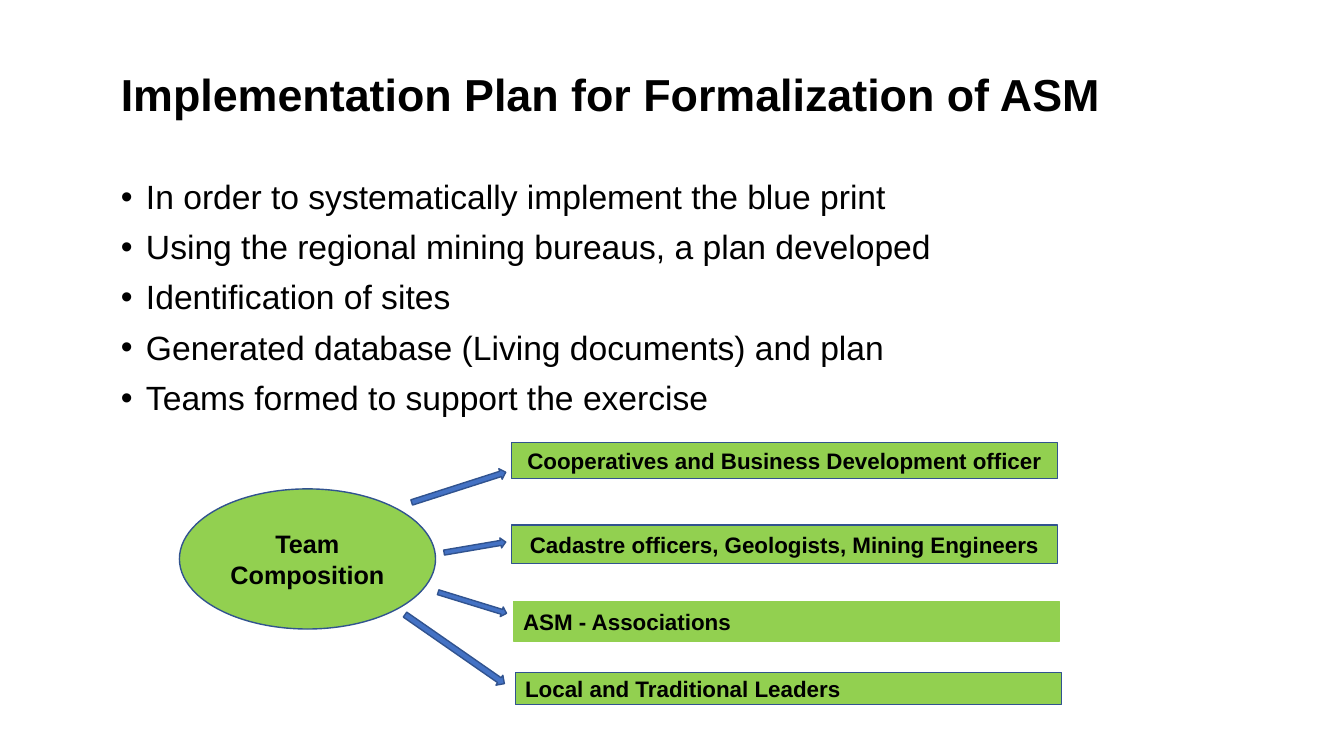
from lxml.etree import SubElement
from pptx import Presentation
from pptx.dml.color import RGBColor
from pptx.enum.shapes import MSO_SHAPE as Shape
from pptx.enum.text import MSO_ANCHOR as Anchor, PP_ALIGN as Align
from pptx.oxml.ns import qn
from pptx.util import Emu, Pt

EMU_PER_PX = 9144  # 100 px to the inch
COLORS = {"text": "000000", "box": "92D050", "outline": "31538F", "arrow": "4472C4"}
FONT = "Arial"

TITLE = "Implementation Plan for Formalization of ASM"
BULLETS = [
    "In order to systematically implement the blue print",
    "Using the regional mining bureaus, a plan developed",
    "Identification of sites",
    "Generated database (Living documents) and plan",
    "Teams formed to support the exercise",
]
MEMBER_WIDTH = 542
# left, top, height, text, alignment, outline
MEMBERS = [
    (507, 439, 36, "Cooperatives and Business Development officer", Align.CENTER, "outline"),
    (507, 521, 38, "Cadastre officers, Geologists, Mining Engineers", Align.CENTER, "outline"),
    (509, 597, 39, "ASM - Associations", Align.LEFT, "box"),
    (511, 667, 32, "Local and Traditional Leaders", Align.LEFT, "outline"),
]
# left, top, width, height, rotation
ARROWS = [
    (406, 478, 98, 11, -17.8),
    (440, 538, 62, 10, -9.7),
    (433, 593, 71, 10, 17.1),
    (391, 638, 120, 12, 34.8),
]


def px(value):
    return Emu(value * EMU_PER_PX)


def color(name):
    return RGBColor.from_string(COLORS[name])


def set_font(paragraph, size, bold):
    font = paragraph.font
    font.name, font.size, font.bold = FONT, Pt(size), bold
    font.color.rgb = color("text")


def add_bullet(paragraph):
    properties = paragraph._p.get_or_add_pPr()
    properties.set("marL", str(px(25)))
    properties.set("indent", str(px(-25)))
    SubElement(properties, qn("a:buFont"), typeface=FONT)
    SubElement(properties, qn("a:buChar"), char="•")


def add_text(slide, box, lines, size, bold=False, anchor=Anchor.TOP, bulleted=False):
    frame = slide.shapes.add_textbox(*map(px, box)).text_frame
    frame.word_wrap = True
    frame.vertical_anchor = anchor
    frame.text = "\n".join(lines)
    for index, paragraph in enumerate(frame.paragraphs):
        if bulleted:
            add_bullet(paragraph)
        paragraph.line_spacing = 0.9
        if index:
            paragraph.space_before = Pt(10)
        set_font(paragraph, size, bold)


def add_figure(slide, kind, box, fill, outline="outline"):
    shape = slide.shapes.add_shape(kind, *map(px, box))
    shape.shadow.inherit = False
    shape.fill.solid()
    shape.fill.fore_color.rgb = color(fill)
    shape.line.color.rgb = color(outline)
    shape.line.width = Pt(1)
    return shape


def add_label(shape, text, size, alignment):
    frame = shape.text_frame
    frame.word_wrap = True
    frame.vertical_anchor = Anchor.MIDDLE
    paragraph = frame.paragraphs[0]
    paragraph.text = text
    paragraph.alignment = alignment
    set_font(paragraph, size, True)


def main():
    presentation = Presentation()
    presentation.slide_width, presentation.slide_height = px(1333), px(750)
    slide = presentation.slides.add_slide(presentation.slide_layouts[6])

    # Title and bullets
    add_text(slide, (110, 40, 1104, 112), [TITLE], 32, bold=True, anchor=Anchor.MIDDLE)
    add_text(slide, (110, 174, 1137, 549), BULLETS, 24, bulleted=True)

    # Team members
    for left, top, height, text, alignment, outline in MEMBERS:
        box = (left, top, MEMBER_WIDTH, height)
        member = add_figure(slide, Shape.RECTANGLE, box, "box", outline)
        add_label(member, text, 16, alignment)

    # Team hub
    hub = add_figure(slide, Shape.OVAL, (178, 485, 254, 139), "box")
    add_label(hub, "Team Composition", 18, Align.CENTER)

    # Arrows from the hub to the members
    for *box, rotation in ARROWS:
        add_figure(slide, Shape.RIGHT_ARROW, box, "arrow").rotation = rotation

    presentation.save("out.pptx")


if __name__ == "__main__":
    main()
